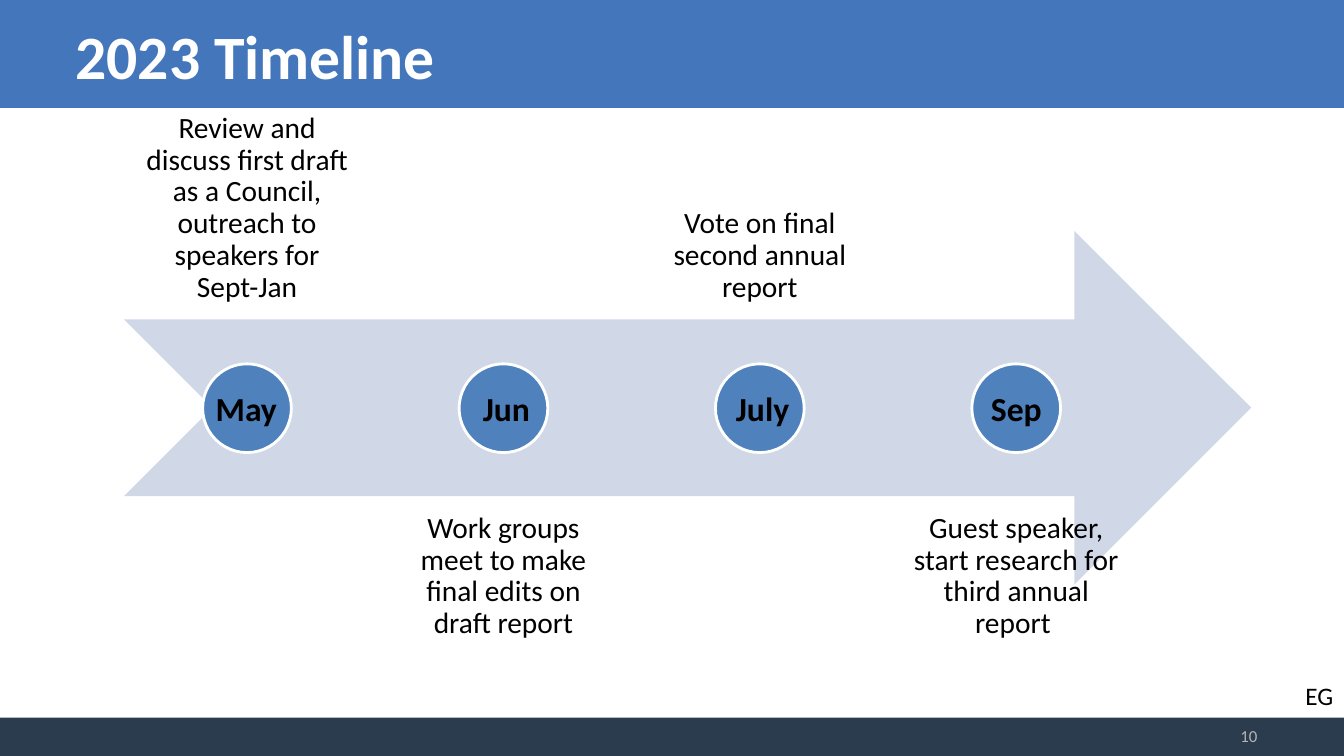
from pptx import Presentation
from pptx.dml.color import RGBColor
from pptx.enum.shapes import MSO_SHAPE
from pptx.enum.text import MSO_ANCHOR, PP_ALIGN
from pptx.util import Inches, Pt

WHITE = RGBColor(0xFF, 0xFF, 0xFF)
BLACK = RGBColor(0x00, 0x00, 0x00)
GREY = RGBColor(0xB5, 0xB5, 0xB5)
HEADER_BLUE = RGBColor(0x43, 0x76, 0xBB)
FOOTER_NAVY = RGBColor(0x2A, 0x3C, 0x4E)
ARROW_BLUE = RGBColor(0xD0, 0xD8, 0xE8)
DOT_BLUE = RGBColor(0x4F, 0x81, 0xBD)


def add_filled(kind, left, top, width, height, color):
    shape = page.shapes.add_shape(
        kind, Inches(left), Inches(top), Inches(width), Inches(height))
    shape.shadow.inherit = False
    shape.fill.solid()
    shape.fill.fore_color.rgb = color
    shape.line.fill.background()
    return shape


def add_text(text, left, top, width, height, size, color=BLACK, bold=False,
             align=PP_ALIGN.LEFT, anchor=MSO_ANCHOR.TOP):
    box = page.shapes.add_textbox(
        Inches(left), Inches(top), Inches(width), Inches(height))
    frame = box.text_frame
    frame.word_wrap = True
    frame.vertical_anchor = anchor
    para = frame.paragraphs[0]
    para.text = text
    para.alignment = align
    para.font.name = "Calibri"
    para.font.size = Pt(size)
    para.font.bold = bold
    para.font.color.rgb = color
    return frame


deck = Presentation()
deck.slide_width = Inches(13.33)
deck.slide_height = Inches(7.5)
page = deck.slides.add_slide(deck.slide_layouts[6])

# Header and footer bands
add_filled(MSO_SHAPE.RECTANGLE, 0, 0, 13.33, 1.07, HEADER_BLUE)
add_filled(MSO_SHAPE.RECTANGLE, 0, 7.12, 13.33, 0.38, FOOTER_NAVY)
add_text("2023 Timeline", 0.65, 0.06, 12, 0.96, 44, WHITE, bold=True,
         anchor=MSO_ANCHOR.MIDDLE)
add_text("10", 9.58, 7.1, 2.99, 0.4, 12, GREY, align=PP_ALIGN.RIGHT,
         anchor=MSO_ANCHOR.MIDDLE)

# Timeline arrow
add_filled(MSO_SHAPE.NOTCHED_RIGHT_ARROW, 1.23, 2.29, 11.18, 3.51, ARROW_BLUE)

# Milestones: month, left edge of its label, caption
milestones = [
    ("May", 2.04, "Review and discuss first draft as a Council, outreach to speakers for Sept-Jan"),
    ("Jun", 4.69, "Work groups meet to make final edits on draft report"),
    ("July", 7.2, "Vote on final second annual report"),
    ("Sep", 9.73, "Guest speaker, start research for third annual report "),
]
for index, (month, month_left, caption) in enumerate(milestones):
    offset = index * 2.543

    # Captions alternate above and below the arrow
    above = index % 2 == 0
    frame = add_text(caption, 1.24 + offset, -0.34 if above else 4.93, 2.42, 3.51,
                     21, align=PP_ALIGN.CENTER,
                     anchor=MSO_ANCHOR.BOTTOM if above else MSO_ANCHOR.TOP)
    frame.margin_left = frame.margin_right = Inches(0.16)
    frame.margin_top = frame.margin_bottom = Inches(0.16)
    frame.paragraphs[0].line_spacing = 0.9

    dot = add_filled(MSO_SHAPE.OVAL, 2.01 + offset, 3.61, 0.88, 0.88, DOT_BLUE)
    dot.line.color.rgb = WHITE
    dot.line.width = Pt(2)
    add_text(month, month_left, 3.8, 1.25, 0.5, 24, bold=True)

# Presenter initials
add_text("EG", 12.85, 6.7, 1.1, 0.4, 18)

deck.save("out.pptx")
